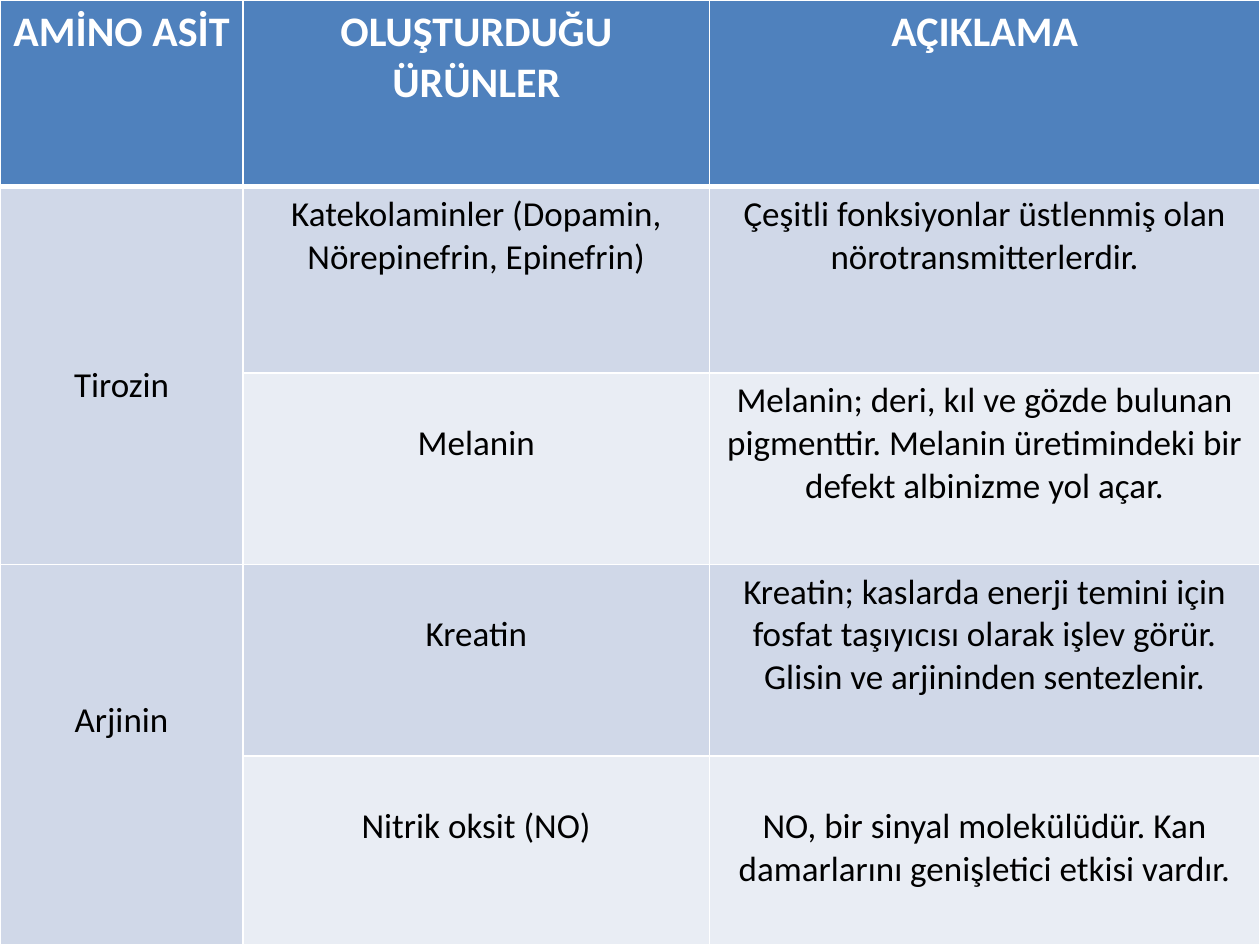
"""Build a slide with a table of amino acids and the products they form."""
from dataclasses import dataclass

from lxml.etree import SubElement
from pptx import Presentation
from pptx.dml.color import RGBColor
from pptx.enum.text import PP_ALIGN
from pptx.oxml.ns import qn
from pptx.util import Inches, Pt

WHITE, BLACK = "FFFFFF", "000000"
HEADER_BLUE, BAND_DARK, BAND_LIGHT = "4F81BD", "D0D8E8", "E9EDF4"
COLUMN_WIDTHS = (1.93, 3.7, 4.37)
ROW_HEIGHTS = (1.48, 1.48, 1.52, 1.52, 1.5)
TOP_MARGIN, LINE_HEIGHT = 0.05, 0.34


@dataclass(frozen=True)
class Entry:
    row: int
    column: int
    text: str
    lines_down: int = 0
    row_span: int = 1


ENTRIES = (
    Entry(0, 0, "AMİNO ASİT"),
    Entry(0, 1, "OLUŞTURDUĞU ÜRÜNLER"),
    Entry(0, 2, "AÇIKLAMA"),
    Entry(1, 0, "Tirozin", 4, 2),
    Entry(1, 1, "Katekolaminler (Dopamin, Nörepinefrin, Epinefrin)"),
    Entry(1, 2, "Çeşitli fonksiyonlar üstlenmiş olan nörotransmitterlerdir."),
    Entry(2, 1, "Melanin", 1),
    Entry(2, 2, "Melanin; deri, kıl ve gözde bulunan pigmenttir. "
                "Melanin üretimindeki bir defekt albinizme yol açar."),
    Entry(3, 0, "Arjinin", 3, 2),
    Entry(3, 1, "Kreatin", 1),
    Entry(3, 2, "Kreatin; kaslarda enerji temini için fosfat taşıyıcısı "
                "olarak işlev görür. Glisin ve arjininden sentezlenir."),
    Entry(4, 1, "Nitrik oksit (NO)", 1),
    Entry(4, 2, "NO, bir sinyal molekülüdür. Kan damarlarını genişletici "
                "etkisi vardır.", 1),
)


def color(hex_value: str) -> RGBColor:
    return RGBColor.from_string(hex_value)


def draw_borders(cell, row: int) -> None:
    widths = {"L": 1, "R": 1, "T": 3 if row == 1 else 1, "B": 3 if row == 0 else 1}
    properties = cell._tc.get_or_add_tcPr()
    for side, width in widths.items():
        line = SubElement(properties, qn(f"a:ln{side}"), w=str(Pt(width)))
        fill = SubElement(line, qn("a:solidFill"))
        SubElement(fill, qn("a:srgbClr"), val=WHITE)


def paint_cell(cell, row: int) -> None:
    draw_borders(cell, row)
    cell.fill.solid()
    band = BAND_DARK if row % 2 else BAND_LIGHT
    cell.fill.fore_color.rgb = color(band if row else HEADER_BLUE)


def write_entry(table, entry: Entry) -> None:
    cell = table.cell(entry.row, entry.column)
    if entry.row_span > 1:
        cell.merge(table.cell(entry.row + entry.row_span - 1, entry.column))
    cell.margin_top = Inches(TOP_MARGIN + LINE_HEIGHT * entry.lines_down)
    cell.text_frame.text = entry.text
    paragraph = cell.text_frame.paragraphs[0]
    paragraph.alignment = PP_ALIGN.CENTER
    is_header = entry.row == 0
    font = paragraph.runs[0].font
    font.name = "Calibri"
    font.size = Pt(24 if is_header else 20)
    font.bold = is_header
    font.color.rgb = color(WHITE if is_header else BLACK)


def main() -> None:
    presentation = Presentation()
    presentation.slide_width, presentation.slide_height = Inches(10), Inches(7.5)
    slide = presentation.slides.add_slide(presentation.slide_layouts[6])
    table = slide.shapes.add_table(
        len(ROW_HEIGHTS), len(COLUMN_WIDTHS), 0, 0, Inches(10), Inches(7.5)
    ).table
    for column, width in zip(table.columns, COLUMN_WIDTHS):
        column.width = Inches(width)
    for index, (row, height) in enumerate(zip(table.rows, ROW_HEIGHTS)):
        row.height = Inches(height)
        for cell in row.cells:
            paint_cell(cell, index)
    for entry in ENTRIES:
        write_entry(table, entry)
    presentation.save("out.pptx")


if __name__ == "__main__":
    main()
